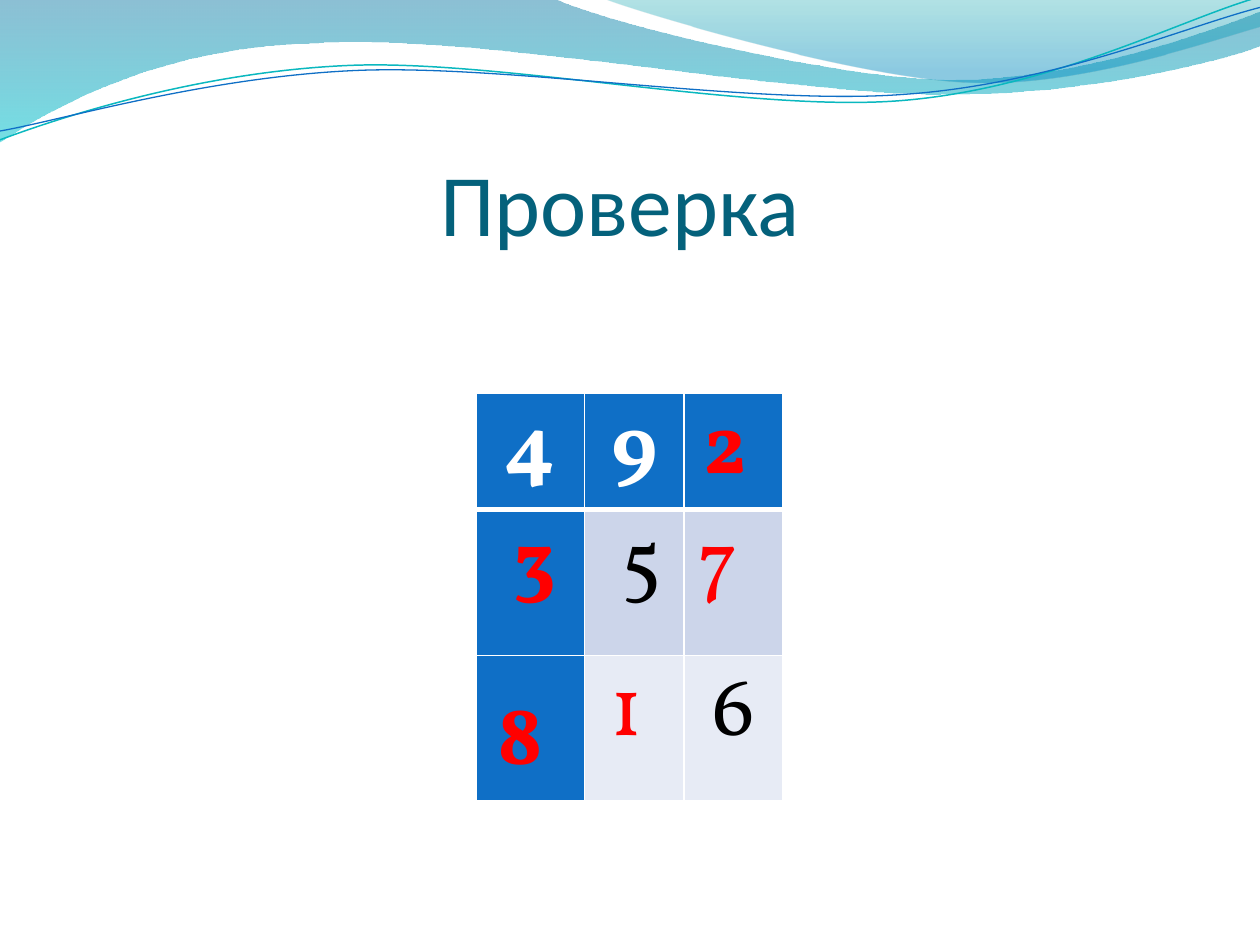
import math

import pptx
import pptx.util
import pptx.dml.color
import pptx.enum.text
import pptx.oxml
import pptx.oxml.ns
import lxml.etree

Pt = pptx.util.Pt
ALIGN = pptx.enum.text.PP_ALIGN
qn = pptx.oxml.ns.qn

COLORS = {
    "title": "04617B", "blue": "0F6FC6", "teal": "0AB8BF",
    "band1": "CCD5EA", "band2": "E7EBF5",
    "white": "FFFFFF", "black": "000000", "red": "FF0000",
    "wave_top": "0074A1", "wave_bottom": "00C6CF",
    "crest_top": "00A1A9", "crest_bottom": "008BBF",
}


def rgb(name):
    return pptx.dml.color.RGBColor.from_string(COLORS[name])


def turn(pt, center, degrees):
    """Turn a point clockwise about a center."""
    a = math.radians(degrees)
    dx, dy = pt[0] - center[0], pt[1] - center[1]
    return (center[0] + dx * math.cos(a) - dy * math.sin(a),
            center[1] + dx * math.sin(a) + dy * math.cos(a))


class Deck:
    title_font, digit_font = "Calibri", "Vollkorn"
    title_size, digit_size = 50, 48
    inset = 5

    def __init__(self, width, height):
        self.prs = pptx.Presentation()
        self.prs.slide_width, self.prs.slide_height = Pt(width), Pt(height)
        self.s = self.prs.slides.add_slide(self.prs.slide_layouts[6])

    def outline(self, segments, close):
        """Segments hold one point (line) or three points (cubic curve)."""
        pts = [(Pt(x), Pt(y)) for seg in segments for x, y in seg]
        fb = self.s.shapes.build_freeform(*pts[0])
        fb.add_line_segments(pts[1:], close=close)
        sp = fb.convert_to_shape()
        sp.shadow.inherit = False
        # Merge each three control points into one Bezier command
        lines = iter(list(sp.element.spPr.iter(qn("a:lnTo"))))
        for seg in segments[1:]:
            group = [next(lines) for _ in seg]
            if len(group) == 3:
                bez = lxml.etree.Element(qn("a:cubicBezTo"))
                group[0].addprevious(bez)
                for ln in group:
                    bez.append(ln[0])
                    ln.getparent().remove(ln)
        return sp

    def wave(self, segments, stops):
        """Closed shape; stops are (position, colour, opacity in percent)."""
        sp = self.outline(segments, True)
        sp.line.fill.background()
        sp.fill.gradient()
        sp.fill.gradient_angle = 270
        for stop, (pos, color, _) in zip(sp.fill.gradient_stops, stops):
            stop.position = pos
            stop.color.rgb = rgb(color)
        for clr, (_, _, opacity) in zip(
                sp.element.spPr.iter(qn("a:srgbClr")), stops):
            lxml.etree.SubElement(clr, qn("a:alpha"), val=str(opacity * 1000))

    def curve(self, segments, center, color, width, tilt=2.7):
        level = [[turn(pt, center, tilt) for pt in seg] for seg in segments]
        sp = self.outline(level, False)
        # Keep the turning point at the given center
        mid = (sp.left + sp.width / 2) / Pt(1), (sp.top + sp.height / 2) / Pt(1)
        x, y = turn(mid, center, -tilt)
        sp.left += Pt(x - mid[0])
        sp.top += Pt(y - mid[1])
        sp.rotation = 360 - tilt
        sp.fill.background()
        sp.line.color.rgb, sp.line.width = rgb(color), Pt(width)

    def title(self, text, x, y, w, h, right):
        tf = self.s.shapes.add_textbox(Pt(x), Pt(y), Pt(w), Pt(h)).text_frame
        tf.word_wrap = True
        tf.vertical_anchor = pptx.enum.text.MSO_ANCHOR.BOTTOM
        tf.margin_left = tf.margin_bottom = 0
        tf.margin_top, tf.margin_right = Pt(3.6), Pt(right)
        p = tf.paragraphs[0]
        p.text, p.alignment = text, ALIGN.CENTER
        self.style(p, self.title_font, self.title_size, "title")

    def style(self, p, font, size, color, bold=False):
        p.font.name, p.font.size, p.font.bold = font, Pt(size), bold
        p.font.color.rgb = rgb(color)

    def border(self, cell, **widths):
        tcPr = cell._tc.get_or_add_tcPr()
        for i, side in enumerate("LRTB"):
            ln = pptx.oxml.parse_xml(
                f'<a:ln{side} {pptx.oxml.ns.nsdecls("a")} '
                f'w="{Pt(widths.get(side, 1))}"><a:solidFill><a:srgbClr '
                f'val="{COLORS["white"]}"/></a:solidFill></a:ln{side}>')
            tcPr.insert(i, ln)

    def table(self, x, y, cols, rows, cells):
        tbl = self.s.shapes.add_table(
            len(rows), len(cols), Pt(x), Pt(y),
            Pt(sum(cols)), Pt(sum(rows))).table
        tbl.first_col = True
        for col, w in zip(tbl.columns, cols):
            col.width = Pt(w)
        for row, h in zip(tbl.rows, rows):
            row.height = Pt(h)
        for r, line in enumerate(cells):
            for c, (text, color, bold, align, left, right, top) in enumerate(line):
                cell = tbl.cell(r, c)
                cell.margin_left = Pt(self.inset + left)
                cell.margin_right = Pt(self.inset + right)
                cell.margin_top, cell.margin_bottom = Pt(top), 0
                cell.fill.solid()
                cell.fill.fore_color.rgb = rgb(
                    "blue" if r == 0 or c == 0 else f"band{r}")
                p = cell.text_frame.paragraphs[0]
                p.text, p.alignment = text, align
                self.style(p, self.digit_font, self.digit_size, color, bold)
                self.border(cell, **({"B": 3} if r == 0 else {}))


def digit(text, color, bold=True, align=ALIGN.CENTER, left=0, right=0, top=0):
    return text, color, bold, align, left, right, top


def main():
    deck = Deck(720, 540)

    # Waves across the top
    deck.wave([
        [(0, 0)], [(316.8, -0.7)],
        [(342.7, 12.2), (478, 45.4), (545.8, 45.4)],
        [(614.2, 45.4), (689.8, 18.7), (720, 6.5)], [(720.7, 25.9)],
        [(707.8, 31.7), (626.4, 54.7), (537.1, 54)],
        [(447.8, 54), (275, 20.2), (185, 24.5)],
        [(92.9, 25.9), (33.1, 59.8), (-0.7, 81.4)]],
        [(0, "wave_top", 45), (1, "wave_bottom", 55)])
    deck.wave([
        [(344.9, -0.7)],
        [(366.5, 7.9), (491, 44.6), (553.7, 46.8)],
        [(616.3, 49.7), (691.9, 23), (720, 15.1)], [(720, 0)]],
        [(0, "crest_top", 30), (0.8, "crest_bottom", 45)])

    # Thin curves
    deck.curve([
        [(0, 79.9)],
        [(34.6, 67), (113.8, 41), (199.4, 37.4)],
        [(284.4, 33.8), (427, 64.1), (513.4, 57.6)],
        [(599.8, 51.1), (675.4, 10.8), (718.6, -1.4)]],
        (359.3, 41.4), "teal", 0.85)
    deck.curve([
        [(0, 74.9)],
        [(33.8, 69.1), (118.1, 43.9), (203.8, 40.3)],
        [(290.2, 36.7), (429.8, 60.5), (516.2, 54)],
        [(601.9, 48.2), (677.5, 15.1), (720, 4.3)]],
        (359.6, 42.5), "blue", 0.75)

    # Title
    deck.title("Проверка", 36, 55.4, 648, 90, right=11)

    # Magic square
    deck.table(272, 224.6, [61.9, 57, 56.7], [66.5, 83.5, 83.3], [
        [digit("4", "white"), digit("9", "white"),
         digit("2", "red", right=10)],
        [digit("3", "red", left=5), digit("5", "black", False, left=9),
         digit("7", "red", False, ALIGN.LEFT, left=2.5)],
        [digit("8", "red", right=11, top=16.6),
         digit("1", "red", False, ALIGN.LEFT, left=10),
         digit("6", "black", False)],
    ])

    deck.prs.save("out.pptx")


if __name__ == "__main__":
    main()
